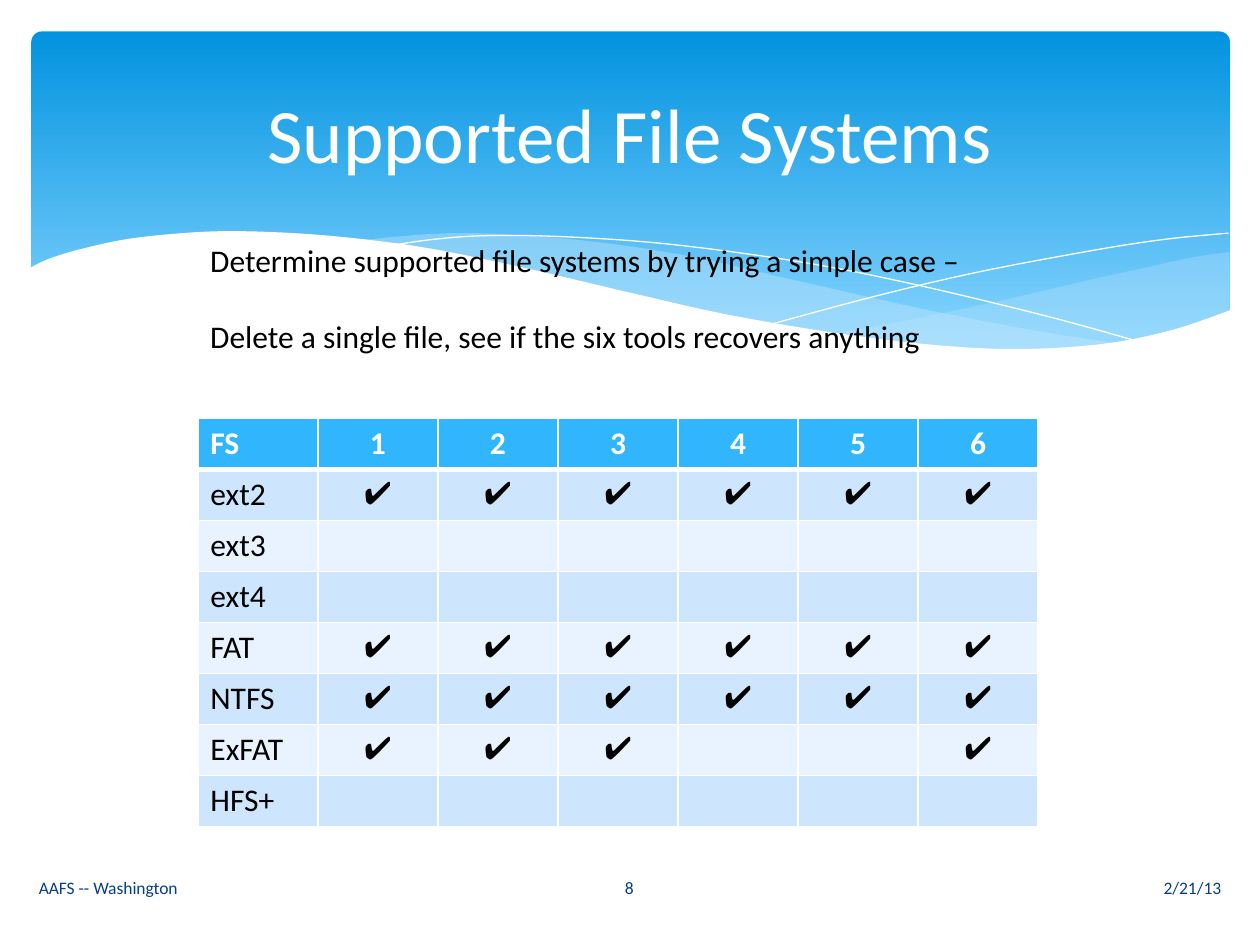
from lxml import etree
from pptx import Presentation
from pptx import util as u
from pptx.dml.color import RGBColor
from pptx.enum import shapes, text
from pptx.oxml.ns import qn

WHITE = RGBColor(0xFF, 0xFF, 0xFF)
BLACK = RGBColor(0x00, 0x00, 0x00)
NAVY = RGBColor(0x07, 0x3E, 0x87)
SKY_TOP = RGBColor(0x02, 0x93, 0xE0)
SKY_BOTTOM = RGBColor(0x83, 0xD3, 0xFE)
MIST = RGBColor(0xC6, 0xE7, 0xFC)
HEADER = RGBColor(0x31, 0xB6, 0xFD)
BANDS = RGBColor(0xCE, 0xE5, 0xFE), RGBColor(0xE8, 0xF3, 0xFF)

LEFT, CENTER, RIGHT = text.PP_ALIGN.LEFT, text.PP_ALIGN.CENTER, text.PP_ALIGN.RIGHT
COLUMNS, ROWS = 100, 75
TICK = "✔"

# Wave edges as (column, row) knots
RIGHT_SWELL = (
    [(97.6, 20), (94.8, 20.4), (90.6, 21.3), (86.1, 22.3), (77.9, 24.2), (70.6, 25.7), (66.1, 26.5)],
    [(66.1, 26.5), (70.5, 27.1), (75.7, 27.6), (81.4, 27.8), (87.2, 27.4), (92.1, 26.5), (97.6, 24.7)],
)
MIDDLE_SWELL = (
    [(89.3, 27.3), (83.7, 26.5), (74.1, 24.7), (62.9, 22.2), (55.5, 20.5), (48.9, 19.4),
     (42, 18.7), (36.1, 18.5), (31.3, 18.8), (28.6, 19.1)],
    [(28.6, 19.1), (36.2, 20.3), (44.9, 22.2), (56.6, 24.8), (65, 26.4), (73.6, 27.5),
     (80.7, 27.8), (85.7, 27.7), (89.3, 27.3)],
)
FALLING_LINE = ([(30.9, 19.5), (34.4, 19), (38.7, 18.7), (45, 18.8), (53.3, 19.4),
                 (63.6, 20.8), (72.7, 22.6), (83.1, 25.1), (90.7, 27.2)],)
RISING_LINE = ([(61.3, 25.7), (69.5, 23.5), (77.6, 21.6), (86.6, 19.9), (92.4, 19), (97.5, 18.5)],)
WHITE_WAVE = (
    [(97.7, 24.6), (93, 26.2), (87.5, 27.3), (80.9, 27.7), (74.4, 27.4), (66.8, 26.5),
     (57.9, 25), (50.3, 23.3), (41.8, 21.3), (34, 19.7), (27.1, 18.8), (21.1, 18.4),
     (16.1, 18.4), (10.6, 18.9), (6.7, 19.7), (4, 20.5), (2.3, 21.3)],
    [(2.3, 21.3), (2.3, 32.9)],
    [(2.3, 32.9), (97.7, 32.9)],
)


def smooth(knots, steps=8):
    """Return points of a Catmull-Rom curve through the knots."""
    padded = [knots[0], *knots, knots[-1]]
    points = [knots[0]]
    for a, b, c, d in zip(padded, padded[1:], padded[2:], padded[3:]):
        for t in (i / steps for i in range(1, steps + 1)):
            points.append(tuple(
                (2 * q + (r - p) * t + (2 * p - 5 * q + 4 * r - e) * t ** 2
                 + (3 * q - p - 3 * r + e) * t ** 3) / 2
                for p, q, r, e in zip(a, b, c, d)))
    return points


def set_values(target, values):
    for name, value in values.items():
        setattr(target, name, value)


class Deck:
    """Current slide plus its style; positions are in grid columns and rows."""

    font = "Calibri"

    def __init__(self):
        self.prs = Presentation()
        self.prs.slide_width, self.prs.slide_height = u.Inches(10), u.Inches(7.5)
        self.s = self.prs.slides.add_slide(self.prs.slide_layouts[6])

    def x(self, column):
        return round(self.prs.slide_width * column / COLUMNS)

    def y(self, row):
        return round(self.prs.slide_height * row / ROWS)

    def box(self, left, top, width, height):
        return self.x(left), self.y(top), self.x(width), self.y(height)

    def add_words(self, p, words, align=LEFT, **font):
        p.alignment = align
        r = p.add_run()
        r.text = words
        color = font.pop("color", BLACK)
        set_values(r.font, {"name": self.font, "size": u.Pt(18), **font})
        r.font.color.rgb = color

    def banner(self, *area):
        sp = self.s.shapes.add_shape(shapes.MSO_SHAPE.ROUNDED_RECTANGLE, *self.box(*area))
        sp.shadow.inherit = False
        sp.adjustments[0] = 0.03
        sp.line.fill.background()
        sp.fill.gradient()
        sp.fill.gradient_angle = 270
        for stop, position, color in zip(sp.fill.gradient_stops, (0, 0.9), (SKY_TOP, SKY_BOTTOM)):
            stop.position, stop.color.rgb = position, color

    def wave(self, edges, fill=None, opacity=100):
        """Draw a filled wave, or an open white hairline when no fill is given."""
        points = [(self.x(c), self.y(r)) for edge in edges for c, r in smooth(edge)]
        builder = self.s.shapes.build_freeform(*points[0])
        builder.add_line_segments(points[1:], close=fill is not None)
        sp = builder.convert_to_shape()
        sp.shadow.inherit = False
        if fill is None:
            sp.fill.background()
            sp.line.color.rgb, sp.line.width = WHITE, 0
            return
        sp.line.fill.background()
        sp.fill.solid()
        sp.fill.fore_color.rgb = fill
        if opacity < 100:
            color = sp.element.spPr.find(qn("a:solidFill"))[0]
            etree.SubElement(color, qn("a:alpha"), val=str(opacity * 1000))

    def text(self, area, *lines, align=LEFT, anchor=text.MSO_ANCHOR.MIDDLE, gap=0, **font):
        tf = self.s.shapes.add_textbox(*self.box(*area)).text_frame
        set_values(tf, {"word_wrap": True, "vertical_anchor": anchor})
        for i, line in enumerate(lines):
            p = tf.add_paragraph() if i else tf.paragraphs[0]
            p.space_before = u.Pt(gap if i else 0)
            self.add_words(p, line, align, **font)

    def border(self, cell, **widths):
        tc_pr = cell._tc.get_or_add_tcPr()
        for side in "LRTB":
            ln = etree.SubElement(tc_pr, qn(f"a:ln{side}"), w=str(u.Pt(widths.get(side, 1))))
            fill = etree.SubElement(ln, qn("a:solidFill"))
            etree.SubElement(fill, qn("a:srgbClr"), val=str(WHITE))

    def table(self, area, rows):
        table = self.s.shapes.add_table(len(rows), len(rows[0]), *self.box(*area)).table
        for i, row in enumerate(rows):
            for j, words in enumerate(row):
                cell = table.cell(i, j)
                self.border(cell, **{0: {"B": 3}, 1: {"T": 3}}.get(i, {}))
                cell.fill.solid()
                cell.fill.fore_color.rgb = BANDS[(i - 1) % 2] if i else HEADER
                if words:
                    self.add_words(cell.text_frame.paragraphs[0], words, CENTER if j else LEFT,
                                   name="Arial" if words == TICK else self.font,
                                   bold=i == 0, color=BLACK if i else WHITE)


def main():
    deck = Deck()
    deck.banner(2.5, 2.5, 95.1, 27)
    deck.wave(RIGHT_SWELL, MIST, 29)
    deck.wave(MIDDLE_SWELL, MIST, 40)
    deck.wave(FALLING_LINE)
    deck.wave(RISING_LINE)
    deck.wave(WHITE_WAVE, WHITE)

    deck.text((5, 3.7, 90, 13.7), "Supported File Systems",
              align=CENTER, size=u.Pt(44), color=WHITE)
    for left, width, words, align in ((56.5, 41.4, "2/21/13", RIGHT),
                                      (2.1, 41.4, "AAFS -- Washington", LEFT),
                                      (43.6, 12.7, "8", CENTER)):
        deck.text((left, 68.4, width, 4), words, align=align, size=u.Pt(10), color=NAVY)

    tools = range(1, 7)
    recovered = {"ext2": tools, "ext3": (), "ext4": (), "FAT": tools,
                 "NTFS": tools, "ExFAT": (1, 2, 3, 6), "HFS+": ()}
    deck.table((15.7, 33.2, 66.7, 32.4),
               [["FS", *map(str, tools)]]
               + [[name, *(TICK if n in hits else "" for n in tools)]
                  for name, hits in recovered.items()])
    deck.text((15.7, 18.6, 66.7, 10.1),
              "Determine supported file systems by trying a simple case –",
              "Delete a single file, see if the six tools recovers anything",
              anchor=text.MSO_ANCHOR.TOP, gap=22)
    deck.prs.save("out.pptx")


if __name__ == "__main__":
    main()
